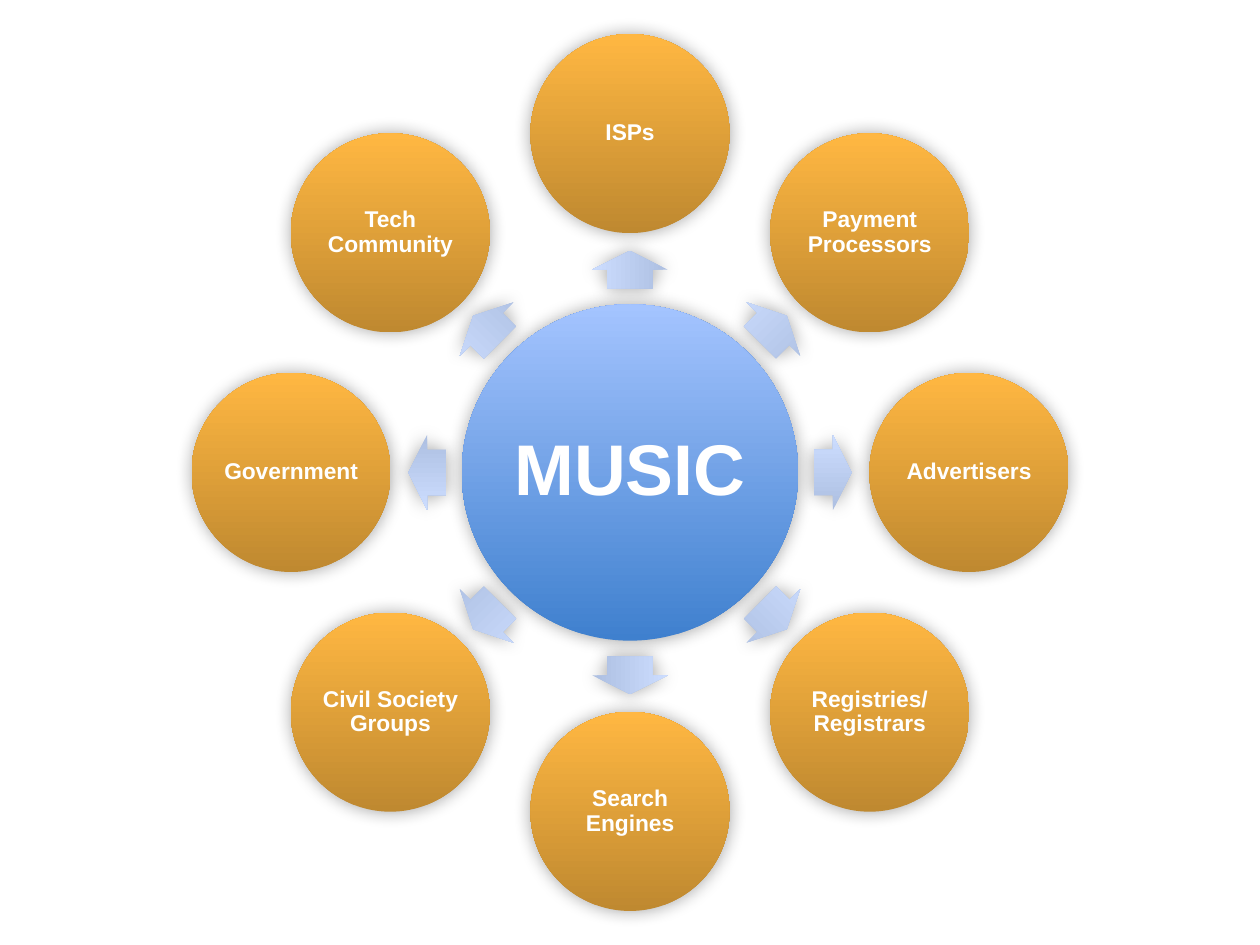
from dataclasses import dataclass
from math import cos, radians, sin

from lxml.etree import SubElement
from pptx import Presentation
from pptx.dml.color import RGBColor
from pptx.enum.shapes import MSO_SHAPE
from pptx.enum.text import MSO_ANCHOR, PP_ALIGN
from pptx.oxml.ns import qn
from pptx.util import Inches, Pt

CENTER_X, CENTER_Y = 5, 3.75
HUB_SIZE, HUB_TEXT_SIZE = 2.67, 1.89
PARTNER_SIZE, PARTNER_TEXT_SIZE = 1.58, 1.12
PARTNER_RADIUS, ARROW_RADIUS = 2.69, 1.61
ARROW_LENGTH, ARROW_WIDTH = 0.3, 0.6


@dataclass
class Gradient:
    bottom: str
    top: str


@dataclass
class Partner:
    label: str
    angle: int  # clockwise from the right


BLUE = Gradient("3F80CE", "A4C4FF")
ORANGE = Gradient("BF8930", "FFB742")
PALE_BLUE = Gradient("ADBFE1", "CCDDFF")

PARTNERS = [
    Partner("ISPs", 270),
    Partner("Payment Processors", 315),
    Partner("Registries/\vRegistrars", 45),
    Partner("Search Engines", 90),
    Partner("Civil Society Groups", 135),
    Partner("Government", 180),
    Partner("Tech Community", 225),
    Partner("Advertisers", 0),
]


def color(value: str) -> RGBColor:
    return RGBColor.from_string(value)


def centered(x: float, y: float, width: float, height: float) -> list:
    """Left, top, width and height of a frame centred on a point."""
    return [Inches(n) for n in (x - width / 2, y - height / 2, width, height)]


def on_ring(radius: float, angle: int) -> tuple[float, float]:
    turn = radians(angle)
    return CENTER_X + radius * cos(turn), CENTER_Y + radius * sin(turn)


def add_soft_shadow(shape) -> None:
    shape.shadow.inherit = False
    effects = shape._element.spPr.find(qn("a:effectLst"))
    shadow = SubElement(effects, qn("a:outerShdw"), blurRad=str(Pt(10)),
                        dist="0", dir="5400000", rotWithShape="0")
    black = SubElement(shadow, qn("a:srgbClr"), val="000000")
    SubElement(black, qn("a:alpha"), val="35000")


def add_gradient_shape(page, kind, frame: list, gradient: Gradient):
    shape = page.shapes.add_shape(kind, *frame)
    shape.fill.gradient()
    shape.fill.gradient_angle = 90
    stops = shape.fill.gradient_stops
    for stop, position, value in zip(stops, (0, 1), (gradient.bottom, gradient.top)):
        stop.position = position
        stop.color.rgb = color(value)
    shape.line.fill.background()
    add_soft_shadow(shape)
    return shape


def add_text(page, text: str, frame: list, *, size: float,
             font: str = "Arial", fill: str = "FFFFFF", bold: bool = True) -> None:
    box = page.shapes.add_textbox(*frame)
    content = box.text_frame
    content.word_wrap = True
    content.vertical_anchor = MSO_ANCHOR.MIDDLE
    content.margin_left = content.margin_right = 0
    content.margin_top = content.margin_bottom = 0
    content.text = text
    para = content.paragraphs[0]
    para.alignment = PP_ALIGN.CENTER
    para.line_spacing = 0.9
    for span in para.runs:
        span.font.name = font
        span.font.size = Pt(size)
        span.font.bold = bold
        span.font.color.rgb = color(fill)


def add_circle(page, text: str, x: float, y: float, *, size: float,
               text_size: float, gradient: Gradient, points: float) -> None:
    add_gradient_shape(page, MSO_SHAPE.OVAL, centered(x, y, size, size), gradient)
    add_text(page, text, centered(x, y, text_size, text_size), size=points)


def add_arrow(page, angle: int) -> None:
    x, y = on_ring(ARROW_RADIUS, angle)
    arrow = add_gradient_shape(page, MSO_SHAPE.RIGHT_ARROW,
                               centered(x, y, ARROW_LENGTH, ARROW_WIDTH), PALE_BLUE)
    arrow.adjustments[0] = 0.6
    arrow.adjustments[1] = 0.5
    arrow.rotation = angle


def main() -> None:
    deck = Presentation()
    deck.slide_width, deck.slide_height = Inches(10), Inches(7.5)
    page = deck.slides.add_slide(deck.slide_layouts[6])

    # Hub
    add_circle(page, "MUSIC", CENTER_X, CENTER_Y, size=HUB_SIZE,
               text_size=HUB_TEXT_SIZE, gradient=BLUE, points=41)

    # Partners around the hub, each with its arrow
    for partner in PARTNERS:
        add_arrow(page, partner.angle)
        x, y = on_ring(PARTNER_RADIUS, partner.angle)
        add_circle(page, partner.label, x, y, size=PARTNER_SIZE,
                   text_size=PARTNER_TEXT_SIZE, gradient=ORANGE, points=13)

    deck.save("out.pptx")


if __name__ == "__main__":
    main()
